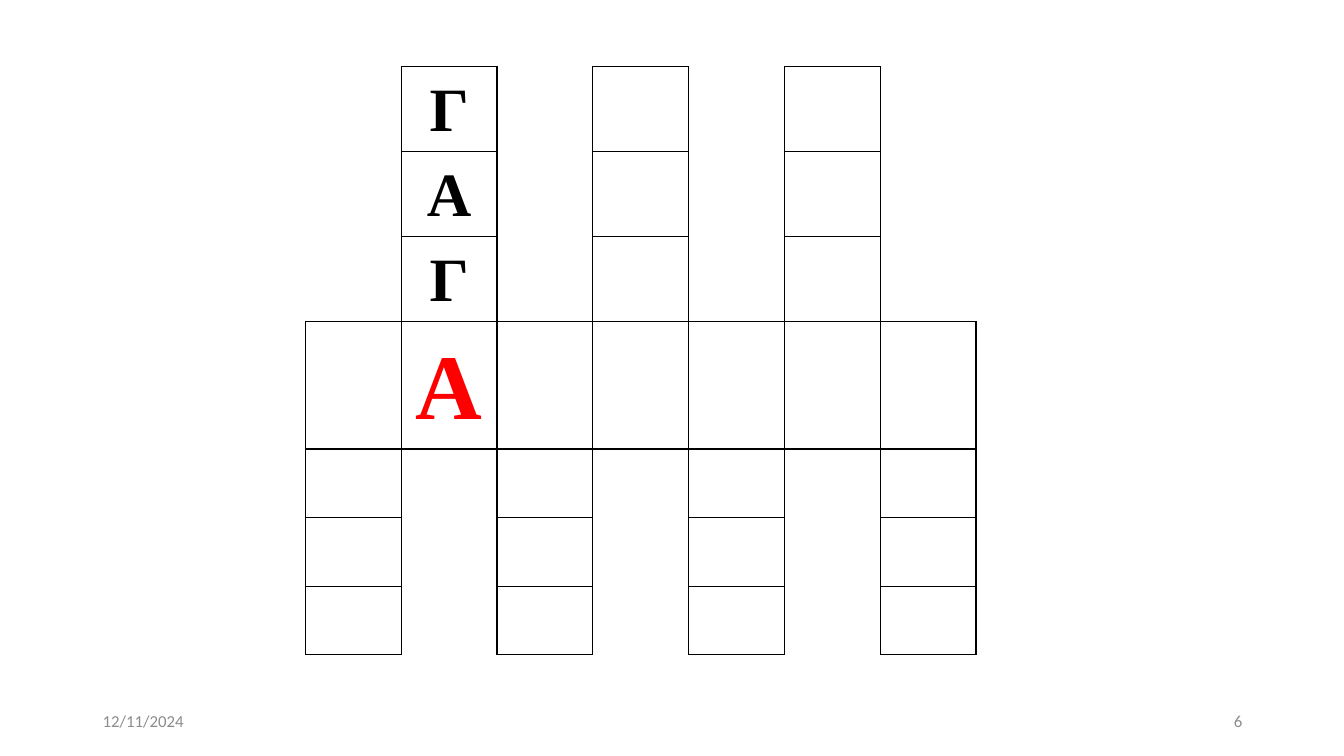
from lxml.etree import SubElement
from pptx import Presentation
from pptx.dml.color import RGBColor
from pptx.enum.text import MSO_ANCHOR, PP_ALIGN
from pptx.oxml.ns import qn
from pptx.util import Inches, Pt

BLACK = RGBColor(0, 0, 0)
RED = RGBColor(255, 0, 0)
GREY = RGBColor(0x8C, 0x8C, 0x8C)
PLAIN = "{2D5ABB26-0587-4C30-8999-92F81FD0307C}"

WORD = "ГАГА"
COLS, MID = 7, 3
WIDE = 0.95
HIGH = [0.78] * MID + [1.17] + [0.68] * MID
LEFT, TOP = 3.03, 0.66


def write(frame, text, size=12, font="Calibri", color=BLACK, bold=False,
          align=PP_ALIGN.LEFT, space=None):
    """Fill a text frame with one formatted paragraph."""
    para = frame.paragraphs[0]
    para.alignment = align
    para.line_spacing = space
    run = para.add_run()
    run.text = text
    run.font.size = Pt(size)
    run.font.name = font
    run.font.bold = bold
    run.font.color.rgb = color


def add_foot(slide, left, text, align):
    """Add a grey line of text at the foot of the slide."""
    box = slide.shapes.add_textbox(Inches(left), Inches(6.95), Inches(3), Inches(0.4))
    frame = box.text_frame
    frame.word_wrap = True
    frame.vertical_anchor = MSO_ANCHOR.MIDDLE
    write(frame, text, color=GREY, align=align)


def is_box(row, col):
    """Tell whether a grid place is a square of the crossword."""
    return row == MID or (row < MID) == (col % 2 == 1)


def rule(cell, sides):
    """Draw thin black lines on the given sides of a cell, none on the rest."""
    props = cell._tc.get_or_add_tcPr()
    for side in "LRTB":
        line = SubElement(props, qn(f"a:ln{side}"), w=str(Pt(1)))
        if side in sides:
            fill = SubElement(line, qn("a:solidFill"))
            SubElement(fill, qn("a:srgbClr"), val=str(BLACK))
        else:
            SubElement(line, qn("a:noFill"))
    cell.fill.background()


def gap_sides(row, col):
    """List the sides on which a gap meets the squares."""
    sides = "B" if row < MID else "T"
    if col > 0:
        sides += "L"
    if col < COLS - 1:
        sides += "R"
    return sides


def add_grid(slide):
    """Add the empty crossword table with its gaps merged."""
    frame = slide.shapes.add_table(
        len(HIGH), COLS, Inches(LEFT), Inches(TOP),
        Inches(WIDE * COLS), Inches(sum(HIGH)))
    table = frame.table
    table.first_row = table.horz_banding = False
    table._tbl.tblPr.find(qn("a:tableStyleId")).text = PLAIN
    for col in table.columns:
        col.width = Inches(WIDE)
    for row, high in enumerate(HIGH):
        table.rows[row].height = Inches(high)
        for col in range(COLS):
            sides = "LRTB" if is_box(row, col) else gap_sides(row, col)
            rule(table.cell(row, col), sides)
    for top in (0, MID + 1):
        for col in range(COLS):
            if not is_box(top, col):
                table.cell(top, col).merge(table.cell(top + MID - 1, col))
    return table


def add_word(table, col):
    """Write the solved word down a column, its key letter large and red."""
    for row, char in enumerate(WORD):
        cell = table.cell(row, col)
        cell.margin_left = cell.margin_right = Inches(0.07)
        cell.margin_top = cell.margin_bottom = 0
        key = row == MID
        write(cell.text_frame, char, size=66 if key else 44,
              font="Times New Roman", color=RED if key else BLACK,
              bold=True, align=PP_ALIGN.CENTER, space=1.15)


def main():
    """Build the crossword slide."""
    deck = Presentation()
    deck.slide_width, deck.slide_height = Inches(13.33), Inches(7.5)
    slide = deck.slides.add_slide(deck.slide_layouts[6])
    add_foot(slide, 0.92, "12/11/2024", PP_ALIGN.LEFT)
    add_foot(slide, 9.42, "6", PP_ALIGN.RIGHT)
    add_word(add_grid(slide), 1)
    deck.save("out.pptx")


if __name__ == "__main__":
    main()
